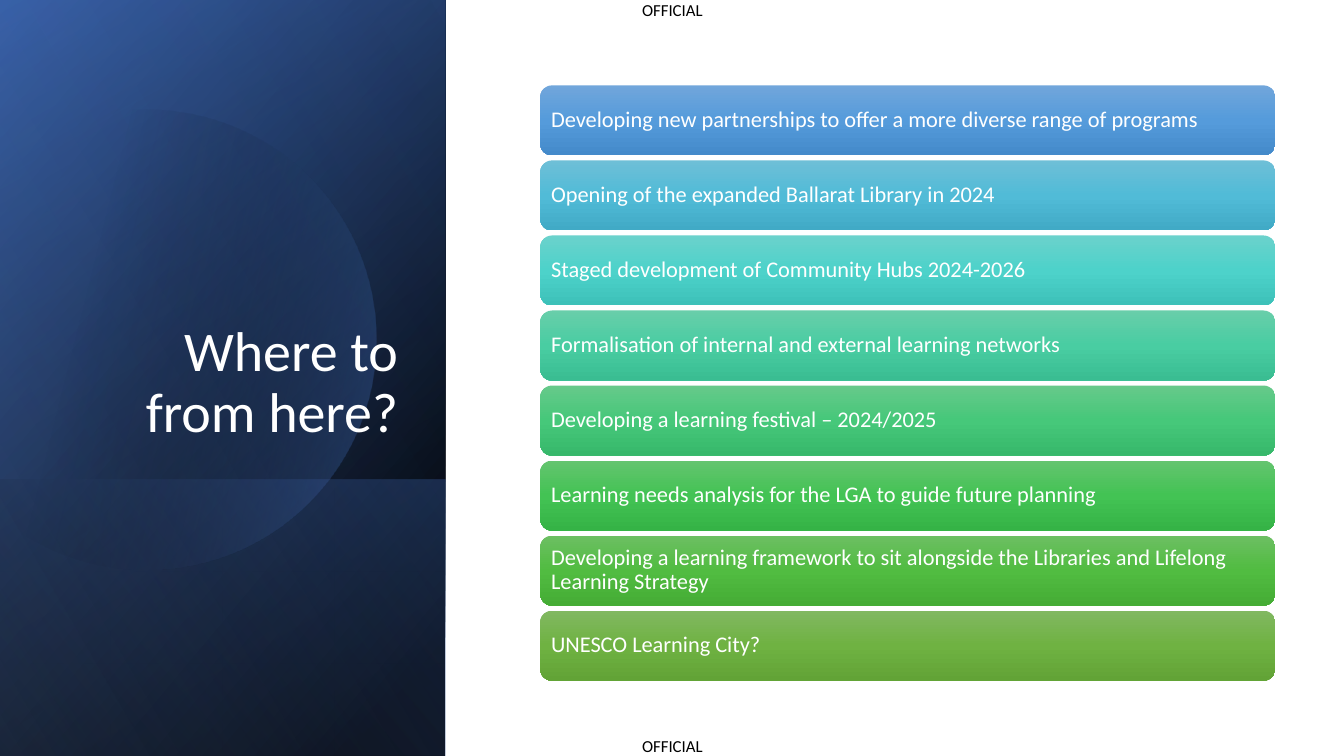
import math
from dataclasses import dataclass

import pptx
import pptx.dml.color
import pptx.enum.shapes
import pptx.enum.text
import pptx.oxml
import pptx.oxml.ns
import pptx.util

Pt = pptx.util.Pt
ALIGN = pptx.enum.text.PP_ALIGN
ANCHOR = pptx.enum.text.MSO_ANCHOR
SHAPE = pptx.enum.shapes.MSO_SHAPE


@dataclass(frozen=True)
class Theme:
    font: str = "Calibri"
    black: str = "000000"
    white: str = "FFFFFF"
    navy: str = "2F5597"
    blue: str = "4472C4"
    pale_blue: str = "8FAADC"
    title_size: int = 40
    step_size: int = 16
    marking_size: int = 12


@dataclass(frozen=True)
class Box:
    left: float
    top: float
    width: float
    height: float


THEME = Theme()
PANEL = Box(0, 0, 318, 540)
STEPS = Box(385.9, 61, 525, 425.2)
STEP_HEIGHT = 50
MARKING = "OFFICIAL"

NEXT_STEPS = [
    ("Developing new partnerships to offer a more diverse range of programs", ("71A6DB", "559BDB", "448ACA")),
    ("Opening of the expanded Ballarat Library in 2024", ("6EBFD7", "51BBD7", "41AAC6")),
    ("Staged development of Community Hubs 2024-2026", ("6BD2CC", "4DD2CA", "3DC1B9")),
    ("Formalisation of internal and external learning networks", ("68CEAA", "49CDA2", "3ABD92")),
    ("Developing a learning festival – 2024/2025", ("66C98A", "46C87A", "37B86B")),
    ("Learning needs analysis for the LGA to guide future planning", ("64C46F", "43C354", "35B346")),
    ("Developing a learning framework to sit alongside the Libraries and Lifelong Learning Strategy",
     ("6CBF62", "51BC41", "45AC35")),
    ("UNESCO Learning City?", ("81B861", "6FB242", "62A336")),
]


def fill_gradient(shape, stops, angle):
    shape.shadow.inherit = False
    shape.line.fill.background()
    shape.fill.background()
    stop_xml = "".join(
        f'<a:gs pos="{position * 1000}"><a:srgbClr val="{color}">'
        f'<a:alpha val="{opacity * 1000}"/></a:srgbClr></a:gs>'
        for position, color, opacity in stops
    )
    gradient = pptx.oxml.parse_xml(
        f'<a:gradFill {pptx.oxml.ns.nsdecls("a")} rotWithShape="1"><a:gsLst>{stop_xml}</a:gsLst>'
        f'<a:lin ang="{angle * 60000}" scaled="0"/></a:gradFill>'
    )
    properties = shape.element.spPr
    properties.replace(properties.find(pptx.oxml.ns.qn("a:noFill")), gradient)


def write_text(frame, text, size, color, align=ALIGN.LEFT, anchor=ANCHOR.MIDDLE, spacing=0.9, wrap=True):
    frame.word_wrap = wrap
    frame.auto_size = pptx.enum.text.MSO_AUTO_SIZE.NONE
    frame.vertical_anchor = anchor
    paragraph = frame.paragraphs[0]
    paragraph.alignment = align
    paragraph.line_spacing = spacing
    run = paragraph.add_run()
    run.text = text
    run.font.name = THEME.font
    run.font.size = Pt(size)
    run.font.color.rgb = pptx.dml.color.RGBColor.from_string(color)


def set_insets(frame, horizontal, vertical):
    frame.margin_left = frame.margin_right = Pt(horizontal)
    frame.margin_top = frame.margin_bottom = Pt(vertical)


def add_turned_layer(slide, box, stops, angle):
    shift = (box.width - box.height) / 2
    layer = slide.shapes.add_shape(
        SHAPE.RECTANGLE, Pt(box.left + shift), Pt(box.top - shift), Pt(box.height), Pt(box.width)
    )
    layer.rotation = 90
    layer.element.spPr.xfrm.set("flipH", "1")
    fill_gradient(layer, stops, angle)


def add_disc(slide, box):
    center_x, center_y, radius = box.left + 104.4, box.top + 242.6, 164.2
    points = [
        (Pt(center_x + radius * math.cos(math.radians(degree))),
         Pt(center_y + radius * math.sin(math.radians(degree))))
        for degree in range(-135, 136, 3)
    ]
    builder = slide.shapes.build_freeform(*points[0], scale=1.0)
    builder.add_line_segments(points[1:], close=True)
    fill_gradient(builder.convert_to_shape(), [(29, THEME.black, 0), (100, THEME.blue, 43)], 14)


def add_title_panel(slide, box):
    foot = Box(box.left, box.top + 342.7, box.width, box.height - 342.7)
    add_turned_layer(slide, box, [(8, THEME.black, 100), (100, THEME.navy, 100)], 50)
    add_turned_layer(slide, box, [(0, THEME.black, 0), (99, THEME.blue, 46)], 30)
    add_turned_layer(slide, foot, [(2, THEME.blue, 29), (100, THEME.black, 30)], 130)
    add_disc(slide, box)
    add_turned_layer(slide, box, [(0, THEME.black, 0), (99, THEME.pale_blue, 11)], 120)

    title = slide.shapes.title
    title.left, title.top = Pt(box.left + 46), Pt(box.top + 132.5)
    title.width, title.height = Pt(245.5), Pt(188.6)
    title.element.getparent().append(title.element)
    write_text(title.text_frame, "Where to from here?", THEME.title_size, THEME.white,
               ALIGN.RIGHT, ANCHOR.BOTTOM)


def add_steps(slide, box):
    pitch = (box.height - STEP_HEIGHT) / (len(NEXT_STEPS) - 1)
    for index, (text, colors) in enumerate(NEXT_STEPS):
        step = slide.shapes.add_shape(
            SHAPE.ROUNDED_RECTANGLE, Pt(box.left), Pt(box.top + index * pitch), Pt(box.width), Pt(STEP_HEIGHT)
        )
        fill_gradient(step, [(place, color, 100) for place, color in zip((0, 50, 100), colors)], 90)
        set_insets(step.text_frame, 5.3, 5)
        write_text(step.text_frame, text, THEME.step_size, THEME.white)


def add_marking(slide, box):
    marking = slide.shapes.add_textbox(Pt(box.left), Pt(box.top), Pt(box.width), Pt(box.height))
    set_insets(marking.text_frame, 0, 0)
    write_text(marking.text_frame, MARKING, THEME.marking_size, THEME.black,
               anchor=ANCHOR.TOP, spacing=1.0, wrap=False)


def main():
    presentation = pptx.Presentation()
    presentation.slide_width, presentation.slide_height = Pt(960), Pt(540)
    slide = presentation.slides.add_slide(presentation.slide_layouts[5])
    for top in (0, 525.6):
        add_marking(slide, Box(458.6, top, 46, 14.4))
    add_title_panel(slide, PANEL)
    add_steps(slide, STEPS)
    presentation.save("out.pptx")


if __name__ == "__main__":
    main()
